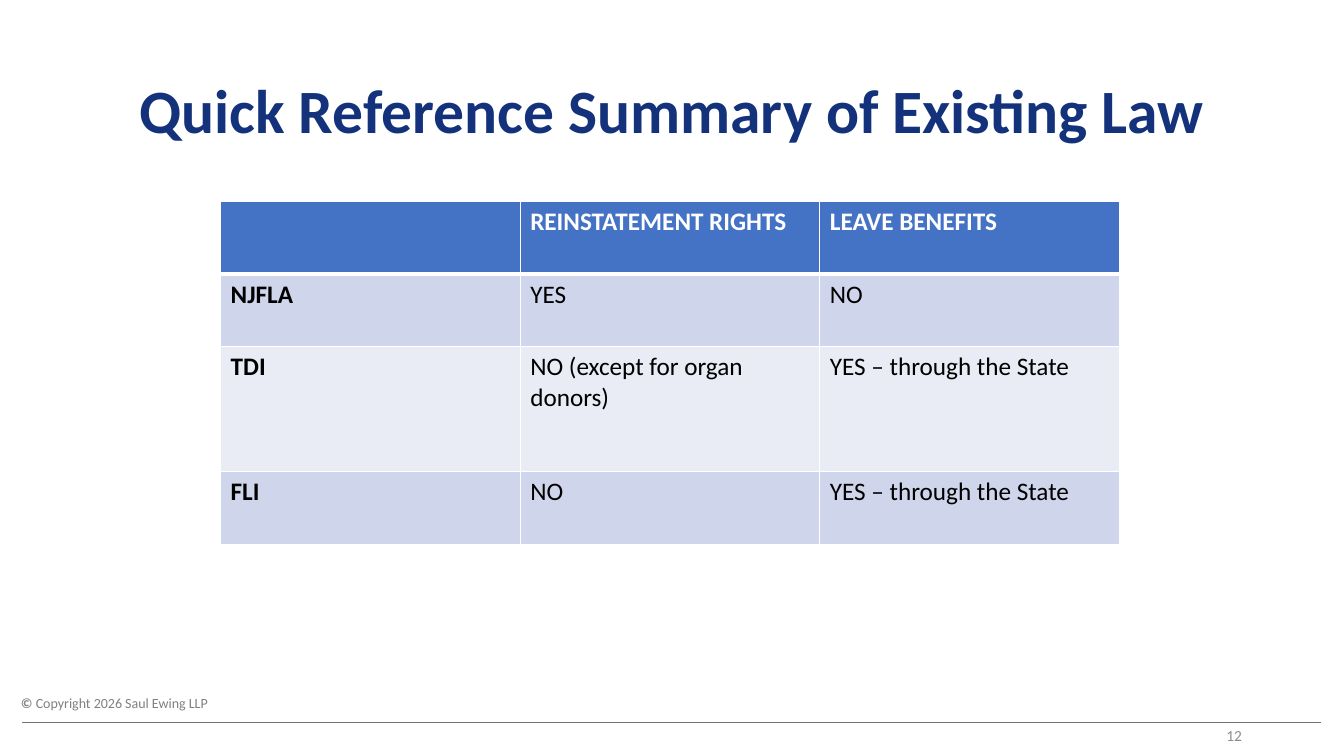
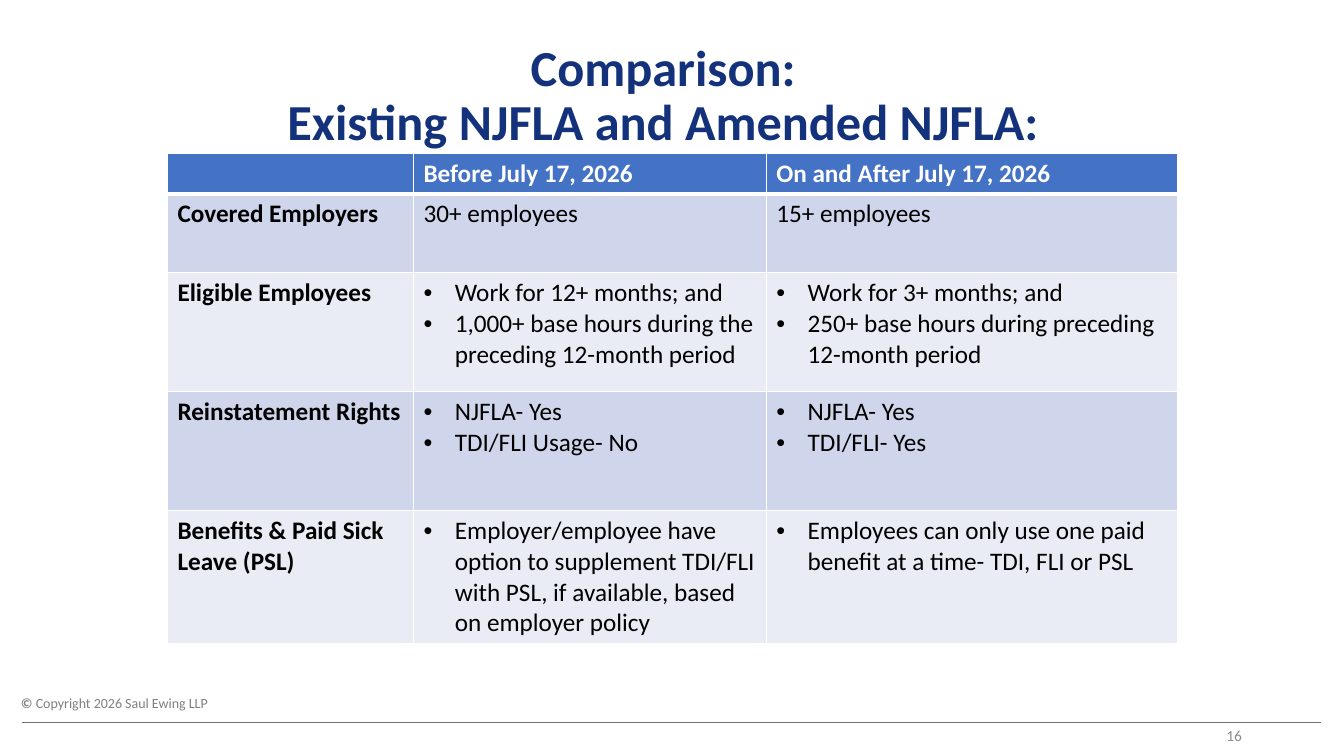
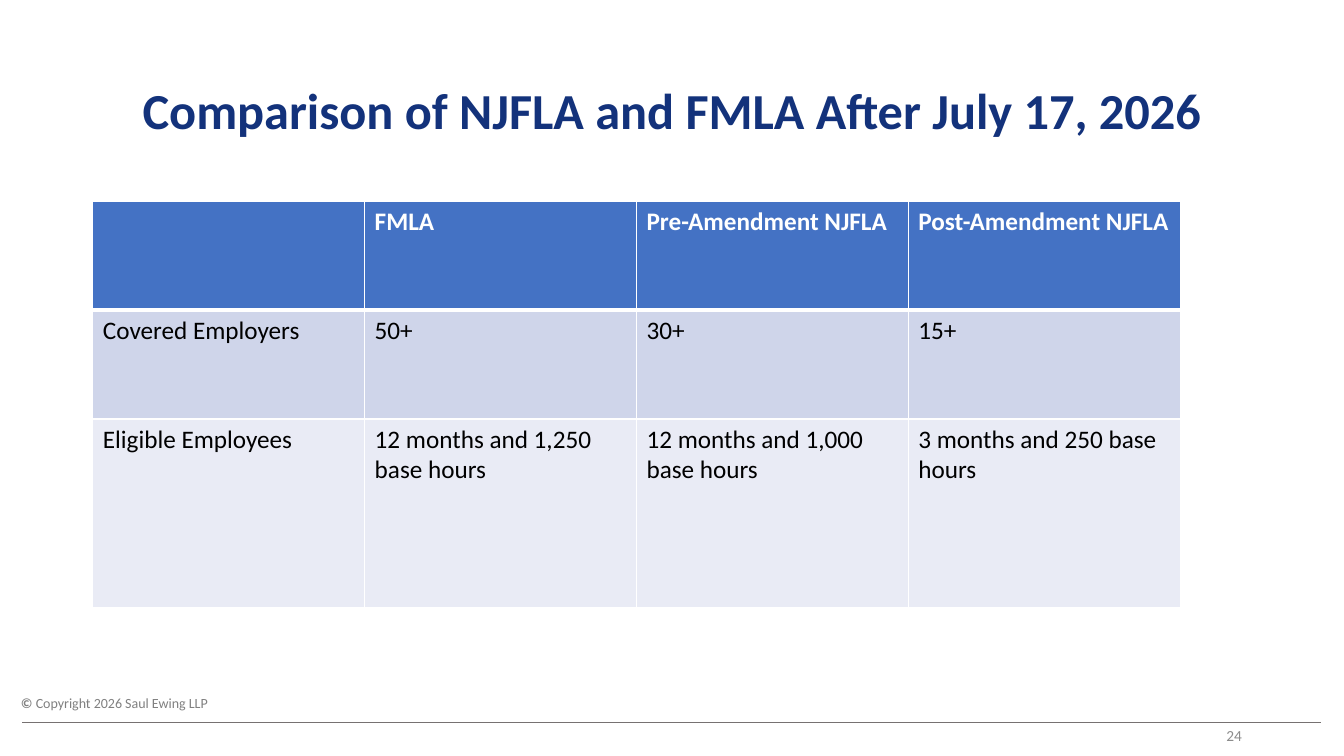
"""Build three slides of tables that compare family leave laws."""
from dataclasses import dataclass

from lxml import etree
from pptx import Presentation
from pptx.dml.color import RGBColor
from pptx.enum.shapes import MSO_CONNECTOR
from pptx.enum.text import MSO_ANCHOR, MSO_AUTO_SIZE, PP_ALIGN
from pptx.oxml.ns import qn
from pptx.util import Cm, Pt

STRAIGHT = MSO_CONNECTOR.STRAIGHT
MIDDLE, TOP = MSO_ANCHOR.MIDDLE, MSO_ANCHOR.TOP
LEFT, CENTER, RIGHT = PP_ALIGN.LEFT, PP_ALIGN.CENTER, PP_ALIGN.RIGHT
FIT_SHAPE = MSO_AUTO_SIZE.SHAPE_TO_FIT_TEXT


@dataclass(frozen=True)
class Theme:
    font: str = "Calibri"
    title: str = "13327B"
    header: str = "4472C4"
    bands: tuple = ("CFD5EA", "E9EBF5")
    white: str = "FFFFFF"
    body: str = "000000"
    copyright: str = "808080"
    rule: str = "767171"
    number: str = "8C8C8C"
    body_size: int = 18
    copyright_size: int = 10
    number_size: int = 11


THEME = Theme()

SLIDES = [
    {
        "number": "12",
        "title": ["Quick Reference Summary of Existing Law"],
        "title_size": 44,
        "title_at": (2.34, 1.02),
        "table_at": (5.56, 5.08),
        "columns": [7.55] * 3,
        "heights": [1.83, 1.83, 3.15, 1.83],
        "bold_labels": True,
        "rows": [
            ["", "REINSTATEMENT RIGHTS", "LEAVE BENEFITS"],
            ["NJFLA", "YES", "NO"],
            ["TDI", "NO (except for organ donors)", "YES – through the State"],
            ["FLI", "NO", "YES – through the State"],
        ],
    },
    {
        "number": "16",
        "title": ["Comparison:", "Existing NJFLA and Amended NJFLA:"],
        "title_size": 36,
        "title_at": (2.11, 0.61),
        "table_at": (4.22, 3.87),
        "columns": [6.2, 8.89, 10.36],
        "heights": [1, 1.98, 3, 3, 3.35],
        "bold_labels": True,
        "rows": [
            ["", "Before July 17, 2026", "On and After July 17, 2026"],
            ["Covered Employers", "30+ employees", "15+ employees"],
            ["Eligible Employees",
             ("Work for 12+ months; and",
              "1,000+ base hours during the preceding 12-month period"),
             ("Work for 3+ months; and",
              "250+ base hours during preceding 12-month period")],
            ["Reinstatement Rights",
             ("NJFLA- Yes", "TDI/FLI Usage- No"),
             ("NJFLA- Yes", "TDI/FLI- Yes")],
            ["Benefits & Paid Sick Leave (PSL)",
             ("Employer/employee have option to supplement TDI/FLI with PSL, "
              "if available, based on employer policy",),
             ("Employees can only use one paid benefit at a time- "
              "TDI, FLI or PSL",)],
        ],
    },
    {
        "number": "24",
        "title": ["Comparison of NJFLA and FMLA After July 17, 2026"],
        "title_size": 36,
        "title_at": (2.34, 1.02),
        "table_at": (2.34, 5.08),
        "columns": [6.85] * 4,
        "heights": [2.74, 2.74, 4.75],
        "bold_labels": False,
        "rows": [
            ["", "FMLA", "Pre-Amendment NJFLA", "Post-Amendment NJFLA"],
            ["Covered Employers", "50+", "30+", "15+"],
            ["Eligible Employees", "12 months and 1,250 base hours",
             "12 months and 1,000 base hours", "3 months and 250 base hours"],
        ],
    },
]


def add_run(paragraph, text, size, color, bold=False):
    run = paragraph.add_run()
    run.text = text
    run.font.name = THEME.font
    run.font.size = Pt(size)
    run.font.bold = bold
    run.font.color.rgb = RGBColor.from_string(color)


def add_box(slide, left, top, width, height, align, anchor, wrap=True):
    box = slide.shapes.add_textbox(Cm(left), Cm(top), Cm(width), Cm(height))
    frame = box.text_frame
    frame.word_wrap = wrap
    frame.vertical_anchor = anchor
    frame.paragraphs[0].alignment = align
    return frame


deck = Presentation()
deck.slide_width, deck.slide_height = Cm(33.87), Cm(19.05)
blank = deck.slide_layouts[6]

for content in SLIDES:
    slide = deck.slides.add_slide(blank)

    notice = add_box(slide, 0.28, 17.37, 5.31, 0.69, LEFT, TOP, wrap=False)
    notice.auto_size = FIT_SHAPE
    for text, bold in (("© ", True), ("Copyright 2026 Saul Ewing LLP", False)):
        add_run(notice.paragraphs[0], text, THEME.copyright_size,
                THEME.copyright, bold)

    rule = slide.shapes.add_connector(
        STRAIGHT, Cm(0.56), Cm(18.21), Cm(33.3), Cm(18.21))
    rule.line.color.rgb = RGBColor.from_string(THEME.rule)
    rule.line.width = Pt(0.5)
    etree.SubElement(rule._element.spPr, qn("a:effectLst"))

    title = add_box(slide, *content["title_at"], 29.21, 3.68, CENTER, MIDDLE)
    heading = title.paragraphs[0]
    heading.line_spacing = 0.9
    for index, line in enumerate(content["title"]):
        if index:
            heading.add_line_break()
        add_run(heading, line, content["title_size"], THEME.title, bold=True)

    rows, columns, heights = (content[k] for k in ("rows", "columns", "heights"))
    left, top = content["table_at"]
    table = slide.shapes.add_table(
        len(rows), len(columns), Cm(left), Cm(top),
        Cm(sum(columns)), Cm(sum(heights))).table
    for column, width in zip(table.columns, columns):
        column.width = Cm(width)
    for row, height in zip(table.rows, heights):
        row.height = Cm(height)

    for r, entries in enumerate(rows):
        is_header = r == 0
        fill = THEME.header if is_header else THEME.bands[(r - 1) % 2]
        ink = THEME.white if is_header else THEME.body
        borders = {"L": 1, "R": 1, "T": 3 if r == 1 else 1,
                   "B": 3 if is_header else 1}
        for c, entry in enumerate(entries):
            cell = table.cell(r, c)
            properties = cell._tc.get_or_add_tcPr()
            for side, weight in borders.items():
                border = etree.SubElement(
                    properties, qn(f"a:ln{side}"), w=str(Pt(weight)))
                paint = etree.SubElement(border, qn("a:solidFill"))
                etree.SubElement(paint, qn("a:srgbClr"), val=THEME.white)
            cell.fill.solid()
            cell.fill.fore_color.rgb = RGBColor.from_string(fill)

            bulleted = isinstance(entry, tuple)
            bold = is_header or (c == 0 and content["bold_labels"])
            for i, text in enumerate(entry if bulleted else [entry]):
                frame = cell.text_frame
                paragraph = frame.add_paragraph() if i else frame.paragraphs[0]
                if bulleted:
                    layout = paragraph._p.get_or_add_pPr()
                    layout.set("marL", str(Cm(0.79)))
                    layout.set("indent", str(-Cm(0.79)))
                    etree.SubElement(layout, qn("a:buFont"), typeface="Arial")
                    etree.SubElement(layout, qn("a:buChar"), char="•")
                if text:
                    add_run(paragraph, text, THEME.body_size, ink, bold)

    number = add_box(slide, 23.93, 18.01, 7.62, 1.02, RIGHT, MIDDLE)
    add_run(number.paragraphs[0], content["number"], THEME.number_size,
            THEME.number)

deck.save("out.pptx")
